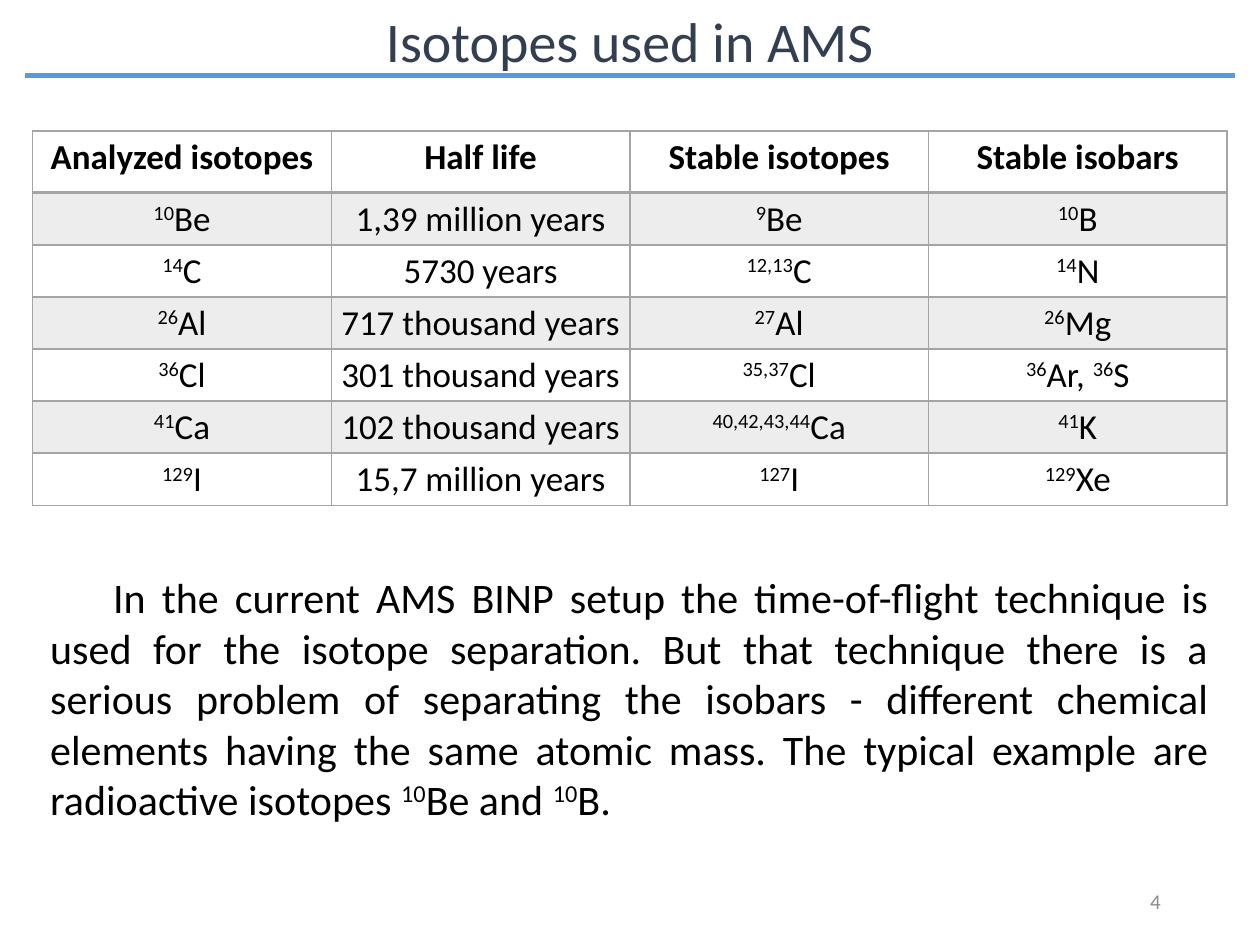
from dataclasses import dataclass

from lxml.etree import SubElement
from pptx import Presentation
from pptx.dml.color import RGBColor as RGB
from pptx.enum.shapes import MSO_CONNECTOR as CONNECTOR
from pptx.enum.text import MSO_ANCHOR as ANCHOR, PP_ALIGN as ALIGN
from pptx.oxml import parse_xml
from pptx.oxml.ns import nsdecls, qn
from pptx.util import Inches, Pt


@dataclass(frozen=True)
class Theme:
    font: str = "Calibri"
    title: RGB = RGB(0x33, 0x3F, 0x50)
    text: RGB = RGB(0, 0, 0)
    muted: RGB = RGB(0x8C, 0x8C, 0x8C)
    rule: RGB = RGB(0x5B, 0x9B, 0xD5)
    grid: RGB = RGB(0xA5, 0xA5, 0xA5)
    band_alpha: int = 20
    title_size: int = 32
    body_size: int = 24
    table_size: int = 20
    number_size: int = 12


THEME = Theme()

# Text between carets is superscript.
ISOTOPES = [
    ("Analyzed isotopes", "Half life", "Stable isotopes", "Stable isobars"),
    ("^10^Ве", "1,39 million years", "^9^Be", "^10^B"),
    ("^14^C", "5730 years", "^12,13^С", "^14^N"),
    ("^26^Al", "717 thousand years", "^27^Al", "^26^Mg"),
    ("^36^Cl", "301 thousand years", "^35,37^Cl", "^36^Ar, ^36^S"),
    ("^41^Ca", "102 thousand years", "^40,42,43,44^Ca", "^41^K"),
    ("^129^I", "15,7 million years", "^127^I", "^129^Xe"),
]
BODY = (
    "In the current AMS BINP setup the time-of-flight technique is used for "
    "the isotope separation. But that technique there is a serious problem of "
    "separating the isobars - different chemical elements having the same "
    "atomic mass. The typical example are radioactive isotopes "
    "^10^Be and ^10^B."
)


def write(p, text, align, size, color, bold=False):
    """Fill a paragraph, raising the parts between carets."""
    p.alignment = align
    fmt = {"name": THEME.font, "size": Pt(size), "bold": bold}
    for i, part in enumerate(text.split("^")):
        if not part:
            continue
        r = p.add_run()
        r.text = part
        for name, value in fmt.items():
            setattr(r.font, name, value)
        r.font.color.rgb = color
        if i % 2:
            r.font._element.set("baseline", "30000")


def add_text(s, box, text, align, size, color, anchor=ANCHOR.TOP):
    tf = s.shapes.add_textbox(*map(Inches, box)).text_frame
    tf.word_wrap = True
    tf.vertical_anchor = anchor
    p = tf.paragraphs[0]
    write(p, text, align, size, color)
    return p


def add_rule(s, left, right, y):
    line = s.shapes.add_connector(
        CONNECTOR.STRAIGHT, Inches(left), Inches(y), Inches(right), Inches(y))
    line.line.color.rgb = THEME.rule
    line.line.width = Pt(3)
    SubElement(line._element.spPr, qn("a:effectLst"))


def set_borders(cell, widths):
    """Draw the sides given as a dict of L, R, T, B (in that order) to points."""
    tc_pr = cell._tc.get_or_add_tcPr()
    for i, (side, width) in enumerate(widths.items()):
        tc_pr.insert(i, parse_xml(
            f'<a:ln{side} {nsdecls("a")} w="{Pt(width)}"><a:solidFill>'
            f'<a:srgbClr val="{THEME.grid}"/></a:solidFill></a:ln{side}>'))


def shade(cell):
    cell.fill.solid()
    cell.fill.fore_color.rgb = THEME.grid
    color = cell._tc.tcPr.find(".//" + qn("a:srgbClr"))
    SubElement(color, qn("a:alpha"), val=str(THEME.band_alpha * 1000))


def add_isotope_table(s, left, top, col_width, header_height, row_height):
    n_rows, n_cols = len(ISOTOPES), len(ISOTOPES[0])
    height = header_height + row_height * (n_rows - 1)
    table = s.shapes.add_table(
        n_rows, n_cols, Inches(left), Inches(top),
        Inches(col_width * n_cols), Inches(height)).table
    table.first_row = table.horz_banding = False
    margins = {"margin_left": 0.07, "margin_right": 0.07,
               "margin_top": 0.04, "margin_bottom": 0.04}
    for i, values in enumerate(ISOTOPES):
        header = i == 0
        table.rows[i].height = Inches(header_height if header else row_height)
        for j, text in enumerate(values):
            cell = table.cell(i, j)
            for name, value in margins.items():
                setattr(cell, name, Inches(value))
            write(cell.text_frame.paragraphs[0], text, ALIGN.CENTER,
                  THEME.table_size, THEME.text, bold=header)
            if i % 2:
                shade(cell)
            else:
                cell.fill.background()
            set_borders(cell, {"L": 1, "R": 1, "T": 2 if i == 1 else 1,
                               "B": 2 if header else 1})


def main():
    prs = Presentation()
    prs.slide_width, prs.slide_height = Inches(10), Inches(7.5)
    s = prs.slides.add_slide(prs.slide_layouts[6])

    add_text(s, (0, 0, 10, 0.64), "Isotopes used in AMS", ALIGN.CENTER,
             THEME.title_size, THEME.title)
    add_rule(s, 0.2, 9.8, 0.6)
    add_isotope_table(s, left=0.26, top=1.04, col_width=2.37,
                      header_height=0.49, row_height=0.41)
    body = add_text(s, (0.3, 4.49, 9.39, 2.12), BODY, ALIGN.JUSTIFY,
                    THEME.body_size, THEME.text)
    body._p.get_or_add_pPr().set("indent", str(Inches(0.5)))
    add_text(s, (7.06, 6.95, 2.25, 0.4), "4", ALIGN.RIGHT,
             THEME.number_size, THEME.muted, ANCHOR.MIDDLE)

    prs.save("out.pptx")


if __name__ == "__main__":
    main()
